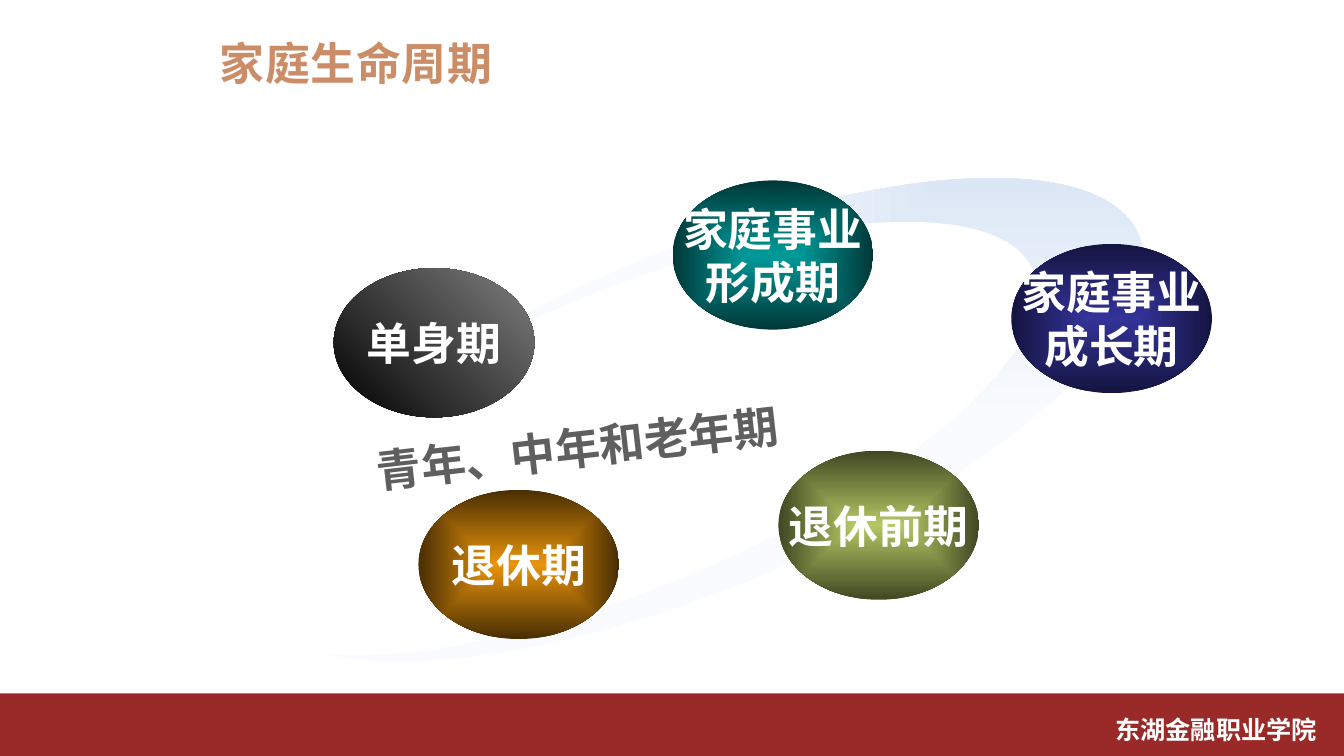
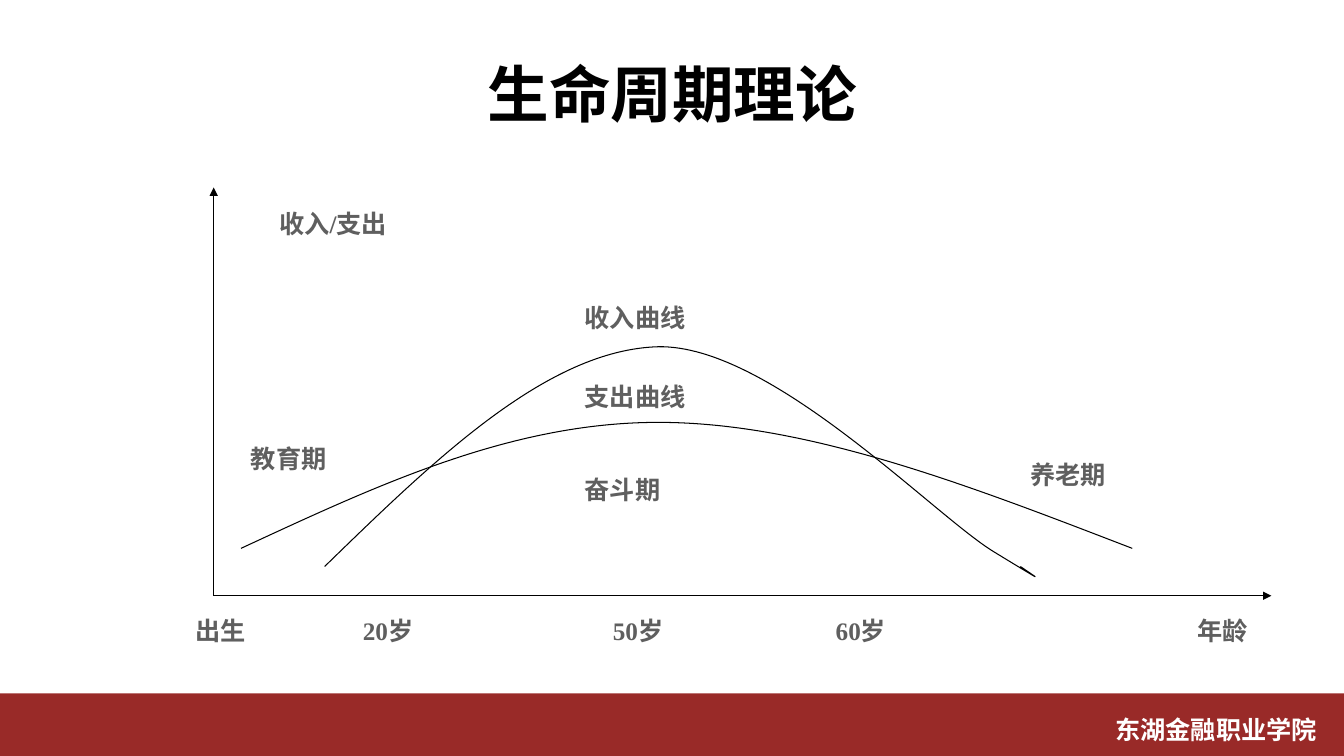
"""Build two slides on the family life cycle."""
from dataclasses import dataclass

from lxml import etree
from pptx import Presentation
from pptx.dml.color import RGBColor
from pptx.enum.dml import MSO_LINE
from pptx.enum.shapes import MSO_CONNECTOR, MSO_SHAPE
from pptx.enum.text import MSO_ANCHOR, PP_ALIGN
from pptx.oxml.ns import qn
from pptx.util import Inches, Pt

OVAL = MSO_SHAPE.OVAL
RECT = MSO_SHAPE.RECTANGLE
STRAIGHT = MSO_CONNECTOR.STRAIGHT
SOLID = MSO_LINE.SOLID
LEFT, CENTER, RIGHT = PP_ALIGN.LEFT, PP_ALIGN.CENTER, PP_ALIGN.RIGHT
JUSTIFY = PP_ALIGN.JUSTIFY
TOP, MIDDLE = MSO_ANCHOR.TOP, MSO_ANCHOR.MIDDLE
FOCUS = (50, 50, 50, 50)
CORNER = (100, 0, 0, 100)
TILT = 337.3
SCHOOL = "东湖金融职业学院"


@dataclass(frozen=True)
class Theme:
    """Hold the colours, fonts and type sizes."""
    band: str = "992A28"
    white: str = "FFFFFF"
    black: str = "000000"
    grey: str = "5F5F5F"
    copper: str = "CB8D67"
    sans: str = "Arial"
    serif: str = "Times New Roman"
    han: str = "Noto Sans CJK SC"
    small: int = 18
    large: int = 32
    huge: int = 44
    line: float = 0.75


class Deck:
    """Draw styled elements on the current slide."""

    def __init__(self, theme):
        self.theme = theme
        self.prs = Presentation()
        self.prs.slide_width = Inches(13.33)
        self.prs.slide_height = Inches(7.5)
        self.slide = None

    def page(self):
        """Start a slide with its band and footer."""
        t = self.theme
        self.slide = self.prs.slides.add_slide(self.prs.slide_layouts[6])
        self.shape(RECT, (0, 6.88, 13.33, 0.63), t.band)
        self.text(SCHOOL, (8.43, 7.04, 4.73, 0.71), t.small, t.white, t.han, RIGHT)

    def shape(self, kind, box, color=None):
        """Add a shape without line or shadow, filled if a colour is given."""
        shape = self.slide.shapes.add_shape(kind, *map(Inches, box))
        shape.shadow.inherit = False
        shape.line.fill.background()
        if color:
            shape.fill.solid()
            shape.fill.fore_color.rgb = RGBColor.from_string(color)
        return shape

    def style(self, frame, text, size, color, font, align, anchor=TOP):
        """Write bold text and format each run."""
        frame.text = text
        frame.vertical_anchor = anchor
        for par in frame.paragraphs:
            par.alignment = align
            for run in par.runs:
                run.font.size = Pt(size)
                run.font.bold = True
                run.font.color.rgb = RGBColor.from_string(color)
                run.font.name = font
                props = run.font._element
                etree.SubElement(props, qn("a:ea"), typeface=self.theme.han)

    def text(self, text, box, size, color, font, align=LEFT, anchor=TOP):
        """Add a wrapped text box."""
        item = self.slide.shapes.add_textbox(*map(Inches, box))
        item.text_frame.word_wrap = True
        self.style(item.text_frame, text, size, color, font, align, anchor)
        return item

    def label(self, text, left, top, width):
        """Add a small chart label on white."""
        t = self.theme
        plate = self.shape(RECT, (left, top, width, 0.47), t.white)
        self.style(plate.text_frame, text, t.small, t.grey, t.serif, JUSTIFY)

    def blend(self, shape, colors, kind="shape", focus=FOCUS):
        """Fill a shape with a gradient, linear if focus is None."""
        shape.fill.gradient()
        for stop, color in zip(shape.fill.gradient_stops, colors):
            stop.color.rgb = RGBColor.from_string(color)
        shape.fill.gradient_angle = 45
        if focus:
            grad = shape._element.spPr.find(qn("a:gradFill"))
            grad.remove(grad.find(qn("a:lin")))
            node = etree.SubElement(grad, qn("a:path"), path=kind)
            sides = {side: str(part * 1000) for side, part in zip("ltrb", focus)}
            etree.SubElement(node, qn("a:fillToRect"), **sides)

    def stage(self, text, left, top, colors, focus=FOCUS):
        """Add an oval for a stage of life."""
        t = self.theme
        oval = self.shape(OVAL, (left, top, 1.99, 1.48))
        self.blend(oval, colors, focus=focus)
        oval.text_frame.word_wrap = False
        self.style(oval.text_frame, text, t.large, t.white, t.sans, CENTER, MIDDLE)

    def swoosh(self):
        """Add the tilted crescent behind the stages."""
        outer = self.shape(OVAL, (2.15, 2.49, 9.51, 3.35))
        self.blend(outer, ("CFDEF3", "F9FBFE"), "rect", CORNER)
        inner = self.shape(OVAL, (1.94, 2.88, 8.64, 2.94), self.theme.white)
        for oval in (outer, inner):
            oval.rotation = TILT

    def stroke(self, line):
        """Set a thin black line."""
        line.color.rgb = RGBColor.from_string(self.theme.black)
        line.width = Pt(self.theme.line)
        line.dash_style = SOLID

    def axis(self, start, end):
        """Add an arrow from start to end."""
        ends = map(Inches, (*start, *end))
        line = self.slide.shapes.add_connector(STRAIGHT, *ends)
        self.stroke(line.line)
        etree.SubElement(line.line._get_or_add_ln(), qn("a:tailEnd"), type="triangle")
        etree.SubElement(line._element.spPr, qn("a:effectLst"))

    def curve(self, knots):
        """Draw joined cubic curves; every third knot is on the line."""
        points = [(Inches(x), Inches(y)) for x, y in knots]
        form = self.slide.shapes.build_freeform(*points[0])
        form.add_line_segments(points[1:], close=False)
        shape = form.convert_to_shape()
        shape.shadow.inherit = False
        shape.fill.background()
        self.stroke(shape.line)
        route = next(shape._element.iter(qn("a:path")))
        lines = route.findall(qn("a:lnTo"))
        for i in range(0, len(lines), 3):
            bend = etree.SubElement(route, qn("a:cubicBezTo"))
            for line in lines[i:i + 3]:
                bend.append(line[0])
                route.remove(line)


def cycle(deck):
    """Build the slide of life stages."""
    t = deck.theme
    deck.page()
    deck.swoosh()
    deck.stage("退休期", 4.15, 4.86, ("E9940B", "492E03"))
    deck.stage("单身期", 3.31, 2.66, ("000000", "808080"), None)
    deck.stage("家庭事业\n形成期", 6.67, 1.79, ("009999", "003838"))
    deck.stage("退休前期", 7.72, 4.47, ("B4C763", "404723"))
    deck.stage("家庭事业\n成长期", 10.03, 2.42, ("333399", "141440"))
    ages = deck.text("青年、中年和老年期", (3.62, 4.03, 5.88, 0.64),
                     t.large, t.grey, t.sans)
    ages.rotation = 353.5
    title = deck.text("家庭生命周期", (0.39, 0.31, 6.28, 0.69),
                      t.large, t.copper, t.han, CENTER)
    title.text_frame.paragraphs[0].runs[0].font._element.set("spc", "50")


def theory(deck):
    """Build the slide of income and spending curves."""
    t = deck.theme
    deck.page()
    deck.text("生命周期理论", (0.67, 0.3, 12, 1.25), t.huge, t.black,
              t.serif, CENTER, MIDDLE)
    origin = (2.12, 5.91)
    for end in ((2.12, 1.86), (12.61, 5.91)):
        deck.axis(origin, end)
    deck.curve([(3.22, 5.62), (4.32, 4.55), (5.43, 3.47), (6.53, 3.44),
                (7.64, 3.42), (9.25, 5.1), (9.85, 5.47),
                (10.44, 5.83), (10.28, 5.73), (10.12, 5.62)])
    for text, left, top, width in (
            ("教育期", 2.39, 4.35, 1.38), ("收入曲线", 5.7, 2.95, 2.21),
            ("支出曲线", 5.7, 3.73, 1.66), ("奋斗期", 5.7, 4.66, 1.38),
            ("养老期", 10.12, 4.51, 1.38), ("收入/支出", 2.67, 2.02, 1.93)):
        deck.label(text, left, top, width)
    deck.curve([(2.39, 5.44), (3.73, 4.82), (5.06, 4.19), (6.53, 4.19),
                (8.01, 4.19), (9.62, 4.82), (11.23, 5.44)])
    for text, left, width in (("出生", 1.84, 1.1), ("20岁", 3.5, 1.38),
                              ("50岁", 5.98, 1.93), ("60岁", 8.19, 2.21),
                              ("年龄", 11.78, 1.38)):
        deck.label(text, left, 6.06, width)


def main():
    """Build and save the deck."""
    deck = Deck(Theme())
    cycle(deck)
    theory(deck)
    deck.prs.save("out.pptx")


if __name__ == "__main__":
    main()
